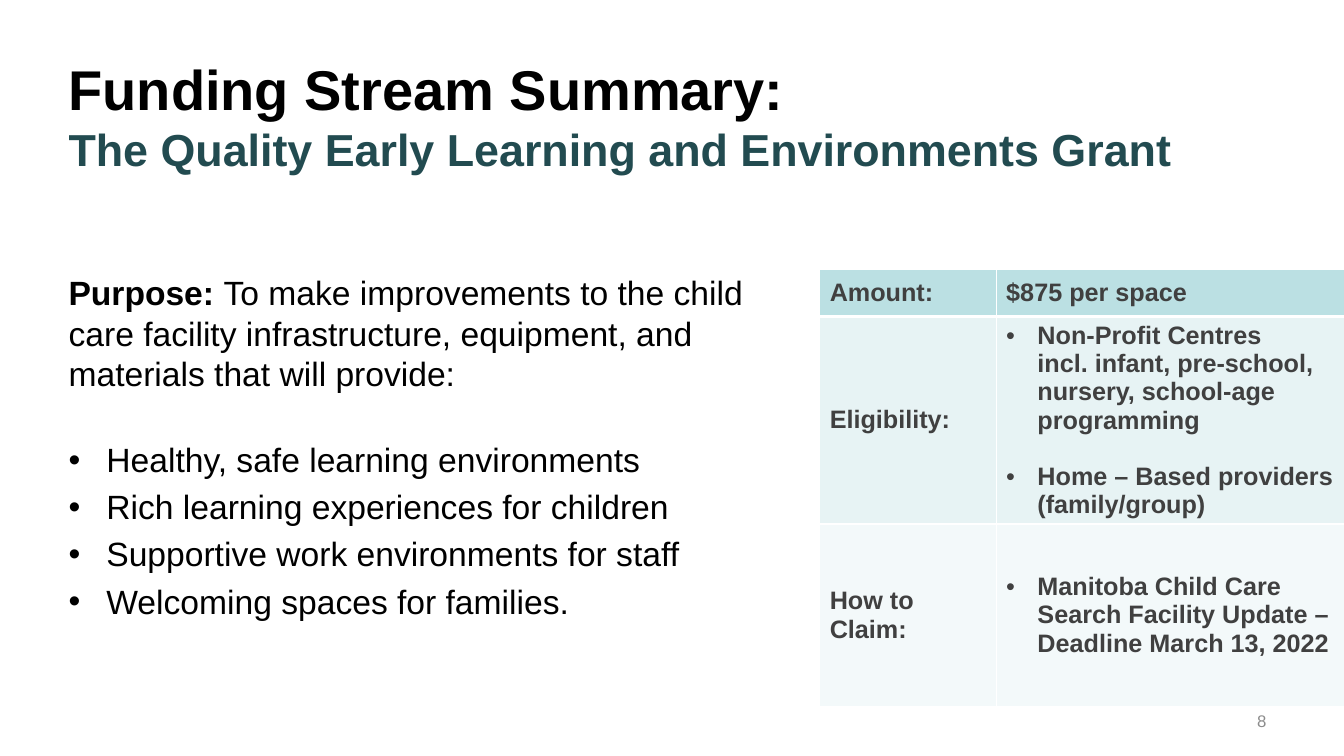
"""Build the funding stream summary slide for the early learning grant."""
from lxml import etree
from pptx import Presentation
from pptx.dml.color import RGBColor
from pptx.enum.text import MSO_ANCHOR, MSO_AUTO_SIZE, PP_ALIGN
from pptx.oxml import parse_xml
from pptx.oxml.ns import nsdecls, qn
from pptx.util import Inches, Pt

LEFT, RIGHT = PP_ALIGN.LEFT, PP_ALIGN.RIGHT
TOP, MIDDLE = MSO_ANCHOR.TOP, MSO_ANCHOR.MIDDLE
NO_FIT = MSO_AUTO_SIZE.NONE
BULLET_INDENT = Inches(0.31)


def color(hex_text):
    """Turn a hex string into a colour."""
    return RGBColor.from_string(hex_text)


def add_span(para, text, size, hex_text, bold=False):
    """Add one formatted run to a paragraph."""
    span = para.add_run()
    span.text = text
    span.font.name = "Arial"
    span.font.size = Pt(size)
    span.font.bold = bold
    span.font.color.rgb = color(hex_text)


deck = Presentation()
deck.slide_width, deck.slide_height = Inches(13.33), Inches(7.5)
page = deck.slides.add_slide(deck.slide_layouts[1])
title, body = page.shapes.title, page.placeholders[1]
number = page.shapes.add_textbox(0, 0, 0, 0)

for box, place, anchor in [
    (title, (0.58, 0.52, 11.7, 1.25), MIDDLE),
    (body, (0.58, 2.65, 7.55, 4.28), TOP),
    (number, (9.66, 6.95, 3, 0.4), MIDDLE),
]:
    box.left, box.top, box.width, box.height = map(Inches, place)
    box.text_frame.word_wrap = True
    box.text_frame.auto_size = NO_FIT
    box.text_frame.vertical_anchor = anchor

para = title.text_frame.paragraphs[0]
para.alignment = LEFT
add_span(para, "Funding Stream Summary:", 40, "000000", True)
para.add_line_break()
add_span(para, "The Quality Early Learning and Environments Grant", 32, "224B50", True)

para = body.text_frame.paragraphs[0]
properties = para._p.get_or_add_pPr()
properties.set("marL", "0")
properties.set("indent", "0")
etree.SubElement(properties, qn("a:buNone"))
para.space_before = Pt(0)
add_span(para, "Purpose: ", 24, "000000", True)
add_span(
    para,
    "To make improvements to the child care facility infrastructure, "
    "equipment, and materials that will provide:",
    24,
    "000000",
)
goals = [
    "Healthy, safe learning environments",
    "Rich learning experiences for children",
    "Supportive work environments for staff",
    "Welcoming spaces for families.",
]
for index, goal in enumerate(goals):
    para = body.text_frame.add_paragraph()
    para.space_before = Pt(4.8 if index else 33)
    add_span(para, goal, 24, "000000")

para = number.text_frame.paragraphs[0]
para.alignment = RIGHT
add_span(para, "8", 12, "8C8C8C")

details = [
    ("Amount:", ["$875 per space"], "BBE0E3", 0.47),
    (
        "Eligibility:",
        [
            "Non-Profit Centres\nincl. infant, pre-school, nursery, school-age programming",
            "Home – Based providers (family/group)",
        ],
        "E7F3F4",
        2.04,
    ),
    (
        "How to Claim:",
        ["Manitoba Child Care Search Facility Update – Deadline March 13, 2022"],
        "F3F9FA",
        1.81,
    ),
]
table = page.shapes.add_table(
    len(details), 2, Inches(8.13), Inches(2.67), Inches(5.21), Inches(4.32)
).table
table.columns[0].width, table.columns[1].width = Inches(1.75), Inches(3.46)

for row, (label, entries, fill, height) in enumerate(details):
    table.rows[row].height = Inches(height)
    for column, texts in enumerate([[label], entries]):
        cell = table.cell(row, column)
        cell.vertical_anchor = MIDDLE
        for side in ("L", "R", "T", "B"):
            heavy = (row, side) in [(0, "B"), (1, "T")]
            cell._tc.get_or_add_tcPr().append(parse_xml(
                f'<a:ln{side} {nsdecls("a")} w="{Pt(3 if heavy else 1)}"><a:solidFill>'
                f'<a:srgbClr val="FFFFFF"/></a:solidFill></a:ln{side}>'
            ))
        cell.fill.solid()
        cell.fill.fore_color.rgb = color(fill)
        for index, text in enumerate(texts):
            frame = cell.text_frame
            para = frame.add_paragraph() if index else frame.paragraphs[0]
            if row and column:
                properties = para._p.get_or_add_pPr()
                properties.set("marL", str(BULLET_INDENT))
                properties.set("indent", str(-BULLET_INDENT))
                etree.SubElement(properties, qn("a:buFont")).set("typeface", "Arial")
                etree.SubElement(properties, qn("a:buChar")).set("char", "•")
            if index:
                para.space_before = Pt(20)
            for position, line in enumerate(text.split("\n")):
                if position:
                    para.add_line_break()
                add_span(para, line, 18, "404040", True)

deck.save("out.pptx")
